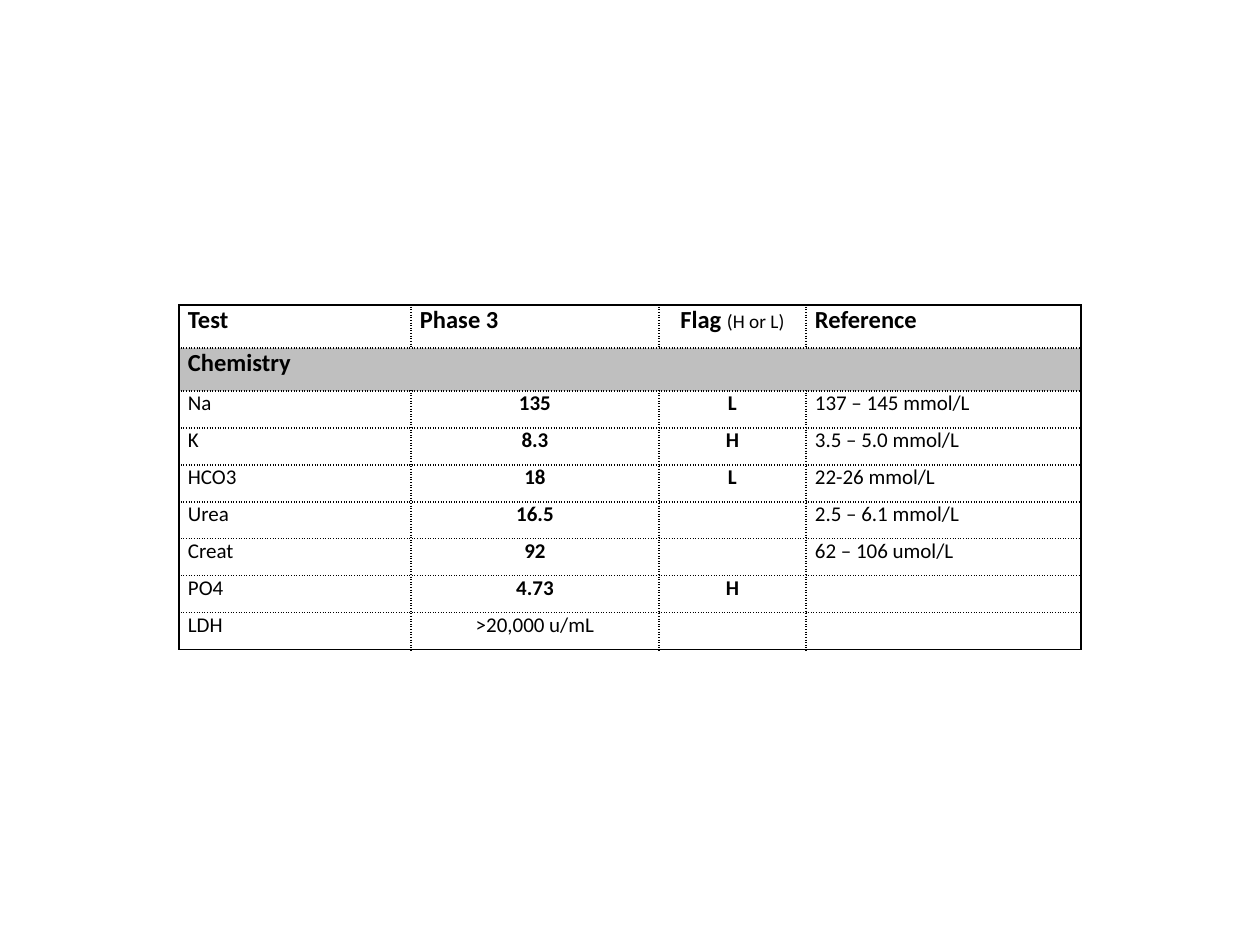
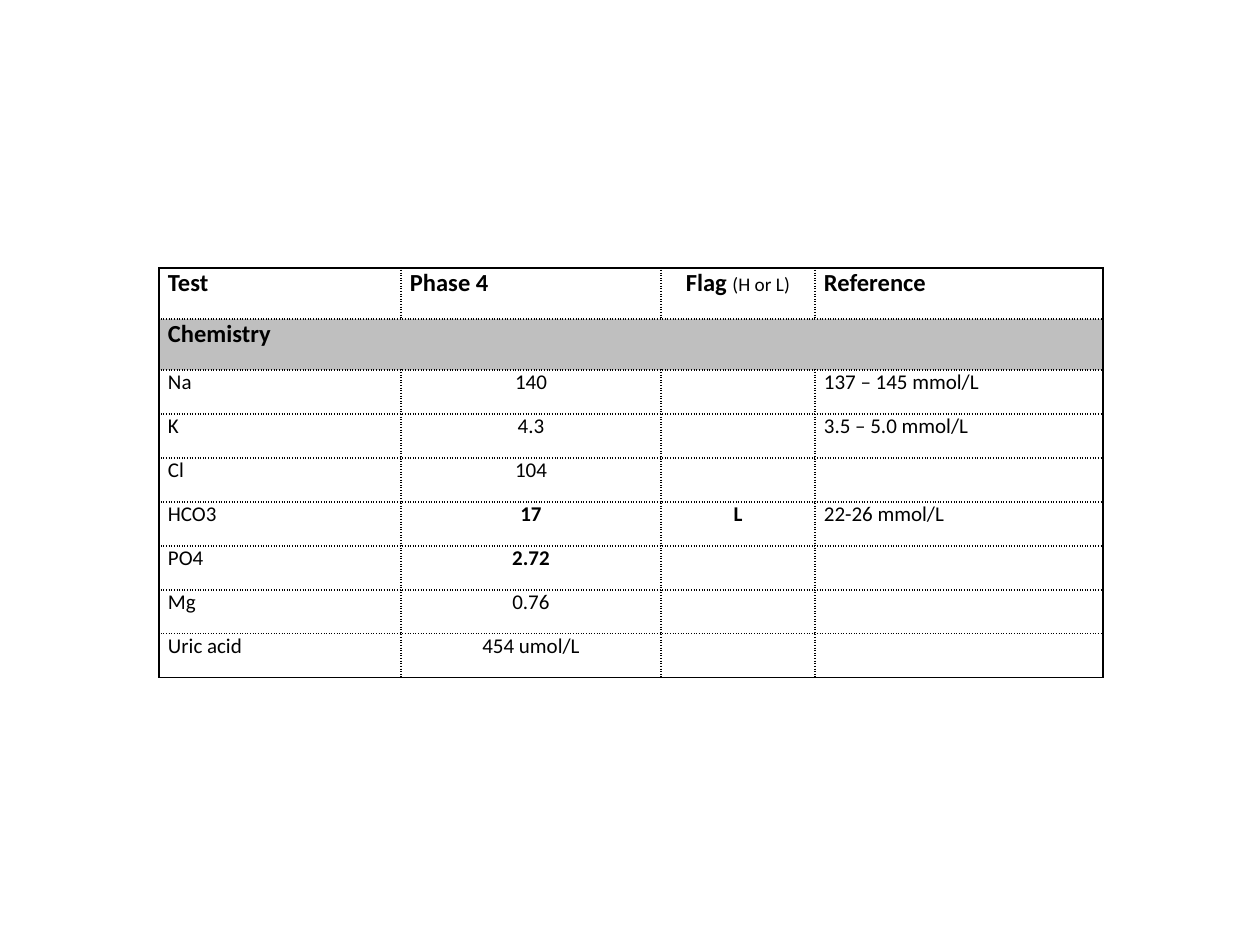
import dataclasses

import lxml.etree
import pptx
import pptx.dml.color
import pptx.enum.text
import pptx.oxml.ns
import pptx.table
import pptx.util

EMU_PER_PX = 914400 / 126
COLORS = {"ink": "000000", "paper": "FFFFFF", "section": "BFBFBF"}
FONT = "Calibri"
HEADING_SIZE, NOTE_SIZE, BODY_SIZE = 14, 11, 12
CENTERED_COLUMNS = (1, 2)
BORDER_POINTS = 1


@dataclasses.dataclass(frozen=True)
class LabResult:
    test: str
    value: str
    flag: str = ""
    reference: str = ""
    bold: bool = False


@dataclasses.dataclass(frozen=True)
class LabTable:
    phase: str
    left: int
    top: int
    column_widths: tuple[int, ...]
    heading_height: int
    result_height: int
    results: tuple[LabResult, ...]


LAB_TABLES = (
    LabTable("Phase 3", 179, 305, (232, 248, 147, 275), 43, 37, (
        LabResult("Na", "135", "L", "137 – 145 mmol/L", True),
        LabResult("K", "8.3", "H", "3.5 – 5.0 mmol/L", True),
        LabResult("HCO3", "18", "L", "22-26 mmol/L", True),
        LabResult("Urea", "16.5", "", "2.5 – 6.1 mmol/L", True),
        LabResult("Creat", "92", "", "62 – 106 umol/L", True),
        LabResult("PO4", "4.73", "H", "", True),
        LabResult("LDH", ">20,000 u/mL"),
    )),
    LabTable("Phase 4", 159, 268, (242, 260, 154, 288), 51, 44, (
        LabResult("Na", "140", "", "137 – 145 mmol/L"),
        LabResult("K", "4.3", "", "3.5 – 5.0 mmol/L"),
        LabResult("Cl", "104"),
        LabResult("HCO3", "17", "L", "22-26 mmol/L", True),
        LabResult("PO4", "2.72", "", "", True),
        LabResult("Mg", "0.76"),
        LabResult("Uric acid", "454 umol/L"),
    )),
)


def px(length: int) -> pptx.util.Emu:
    return pptx.util.Emu(round(length * EMU_PER_PX))


def add_child(parent, tag: str, **attributes: str):
    return lxml.etree.SubElement(parent, pptx.oxml.ns.qn(tag), attributes)


def draw_border(cell: pptx.table._Cell, side: str, solid: bool) -> None:
    width = str(int(pptx.util.Pt(BORDER_POINTS)))
    line = add_child(cell._tc.get_or_add_tcPr(), f"a:ln{side}", w=width)
    add_child(add_child(line, "a:solidFill"), "a:srgbClr", val=COLORS["ink"])
    add_child(line, "a:prstDash", val="solid" if solid else "sysDot")


def format_cell(cell: pptx.table._Cell, fill: str) -> None:
    cell.margin_left = cell.margin_right = px(9)
    cell.margin_top = cell.margin_bottom = 0
    cell.fill.solid()
    cell.fill.fore_color.rgb = pptx.dml.color.RGBColor.from_string(COLORS[fill])


def write_text(cell: pptx.table._Cell, text: str, size: int, bold: bool,
               centered: bool = False) -> None:
    para = cell.text_frame.paragraphs[0]
    if centered:
        para.alignment = pptx.enum.text.PP_ALIGN.CENTER
    if text:
        add_span(para, text, size, bold)
    else:
        add_child(para._p, "a:endParaRPr", sz=str(size * 100))


def add_span(para, text: str, size: int, bold: bool) -> None:
    span = para.add_run()
    span.text = text
    span.font.name = FONT
    span.font.size = pptx.util.Pt(size)
    span.font.bold = bold
    span.font.color.rgb = pptx.dml.color.RGBColor.from_string(COLORS["ink"])


def fill_headings(table: pptx.table.Table, phase: str) -> None:
    for column, heading in enumerate(("Test", phase, "Flag ", "Reference")):
        write_text(table.cell(0, column), heading, HEADING_SIZE, True, column == 2)
    flag_para = table.cell(0, 2).text_frame.paragraphs[0]
    add_span(flag_para, "(H or L)", NOTE_SIZE, False)
    table.cell(1, 0).merge(table.cell(1, len(table.columns) - 1))
    write_text(table.cell(1, 0), "Chemistry", HEADING_SIZE, True)


def fill_results(table: pptx.table.Table, results: tuple[LabResult, ...]) -> None:
    for row, result in enumerate(results, start=2):
        texts = (result.test, result.value, result.flag, result.reference)
        for column, text in enumerate(texts):
            centered = column in CENTERED_COLUMNS
            write_text(table.cell(row, column), text, BODY_SIZE,
                       result.bold and centered, centered)


def style_cells(table: pptx.table.Table) -> None:
    last_row, last_column = len(table.rows) - 1, len(table.columns) - 1
    for row in range(last_row + 1):
        for column in range(last_column + 1):
            cell = table.cell(row, column)
            if cell.is_spanned:
                continue
            right_column = column + cell.span_width - 1
            draw_border(cell, "L", column == 0)
            draw_border(cell, "R", right_column == last_column)
            draw_border(cell, "T", row == 0)
            draw_border(cell, "B", row == last_row)
            format_cell(cell, "section" if cell.is_merge_origin else "paper")


def add_lab_slide(deck, lab: LabTable) -> None:
    page = deck.slides.add_slide(deck.slide_layouts[6])
    heights = [lab.heading_height] * 2 + [lab.result_height] * len(lab.results)
    frame = page.shapes.add_table(
        len(heights), len(lab.column_widths), px(lab.left), px(lab.top),
        px(sum(lab.column_widths)), px(sum(heights)))
    table = frame.table
    table.first_row = table.horz_banding = False
    for column, width in zip(table.columns, lab.column_widths):
        column.width = px(width)
    for row, height in zip(table.rows, heights):
        row.height = px(height)
    fill_headings(table, lab.phase)
    fill_results(table, lab.results)
    style_cells(table)


def main() -> None:
    deck = pptx.Presentation()
    deck.slide_width, deck.slide_height = px(1260), px(945)
    for lab in LAB_TABLES:
        add_lab_slide(deck, lab)
    deck.save("out.pptx")


if __name__ == "__main__":
    main()
